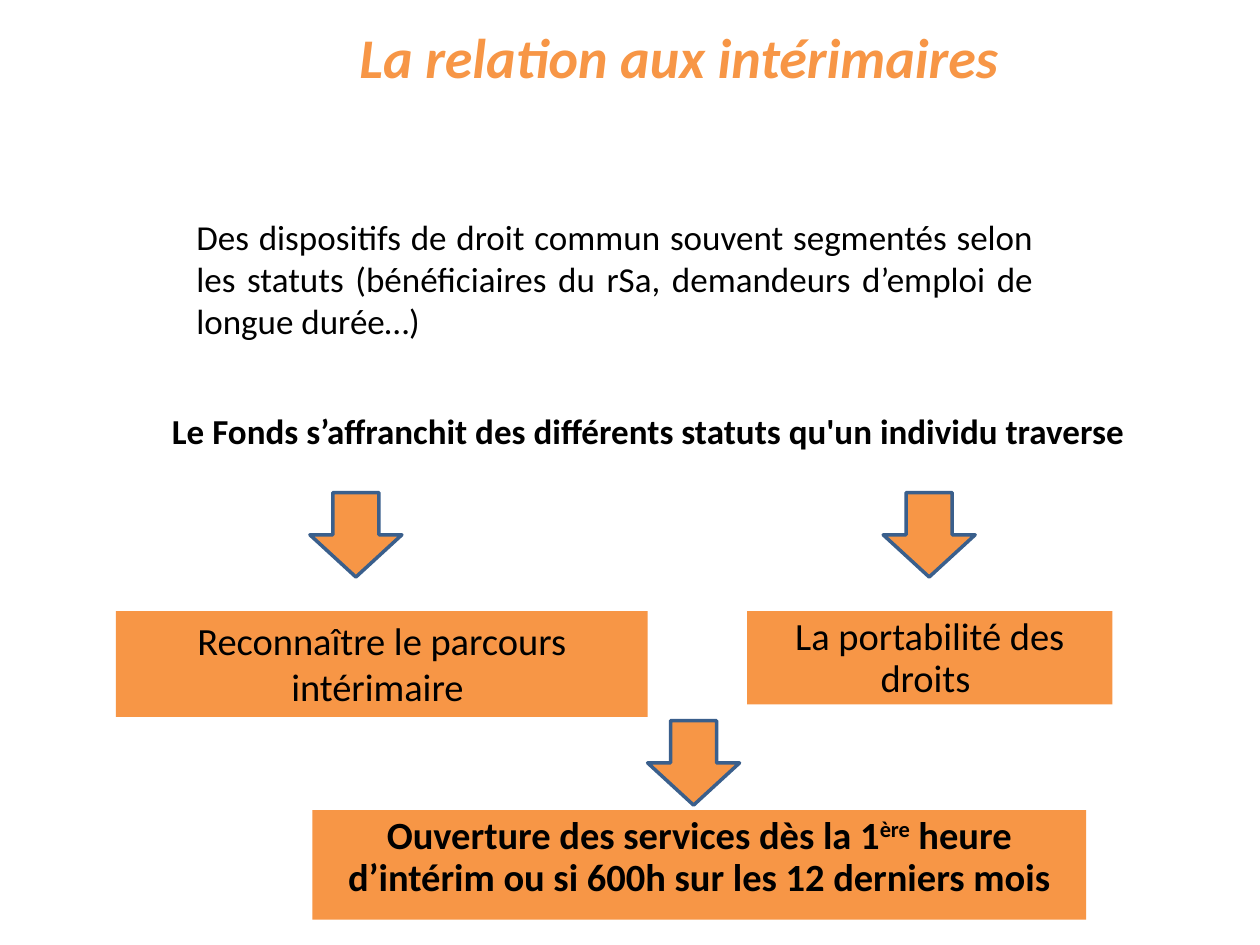
"""Build the slide on the relation with temporary workers."""
from dataclasses import dataclass

from pptx import Presentation
from pptx.dml.color import RGBColor
from pptx.enum.shapes import MSO_SHAPE
from pptx.enum.text import MSO_ANCHOR, PP_ALIGN
from pptx.util import Inches, Pt


@dataclass(frozen=True)
class Theme:
    font: str = "Calibri"
    accent: RGBColor = RGBColor(0xF7, 0x96, 0x46)
    outline: RGBColor = RGBColor(0x3A, 0x5F, 0x8C)
    ink: RGBColor = RGBColor(0, 0, 0)
    paper: RGBColor = RGBColor(0xFF, 0xFF, 0xFF)
    title_size: int = 32
    body_size: int = 20
    label_size: int = 22


class SlideBuilder:
    def __init__(self, page, theme):
        self.page = page
        self.theme = theme

    def fill_text(self, box, spans, font, align=PP_ALIGN.CENTER, anchor=MSO_ANCHOR.TOP, spacing=None):
        frame = box.text_frame
        frame.word_wrap = True
        frame.vertical_anchor = anchor
        para = frame.paragraphs[0]
        for name, value in {"alignment": align, **(spacing or {})}.items():
            setattr(para, name, value)
        style = {"name": self.theme.font, **font}
        color = style.pop("color", self.theme.ink)
        for text, baseline in spans:
            span = para.add_run()
            span.text = text
            span.font.color.rgb = color
            for name, value in style.items():
                setattr(span.font, name, value)
            if baseline:
                span._r.get_or_add_rPr().set("baseline", str(baseline * 1000))

    def shape(self, kind, place, fill, line=None, width=0):
        box = self.page.shapes.add_shape(kind, *map(Inches, place))
        box.shadow.inherit = False
        box.fill.solid()
        box.fill.fore_color.rgb = fill
        if line is None:
            box.line.fill.background()
        else:
            box.line.color.rgb = line
            box.line.width = Pt(width)
        return box

    def title(self, text, place):
        paper = self.theme.paper
        box = self.shape(MSO_SHAPE.RECTANGLE, place, paper, paper, 2.25)
        font = {"size": Pt(self.theme.title_size), "bold": True, "italic": True,
                "color": self.theme.accent}
        self.fill_text(box, [(text, 0)], font, anchor=MSO_ANCHOR.MIDDLE)

    def text(self, text, place, align, bold=False):
        box = self.page.shapes.add_textbox(*map(Inches, place))
        self.fill_text(box, [(text, 0)], {"size": Pt(self.theme.body_size), "bold": bold}, align)

    def label(self, spans, place, bold=False, spacing=None):
        box = self.shape(MSO_SHAPE.RECTANGLE, place, self.theme.accent)
        font = {"size": Pt(self.theme.label_size), "bold": bold}
        self.fill_text(box, spans, font, spacing=spacing)

    def arrow(self, left, top):
        place = (left, top, 0.73, 0.67)
        self.shape(MSO_SHAPE.DOWN_ARROW, place, self.theme.accent, self.theme.outline, 2)


def main():
    deck = Presentation()
    deck.slide_width, deck.slide_height = Inches(10), Inches(7.5)
    builder = SlideBuilder(deck.slides.add_slide(deck.slide_layouts[6]), Theme())
    tight = {"line_spacing": 0.9, "space_before": Pt(10), "space_after": Pt(6)}

    builder.title("La relation aux intérimaires", (0.78, -0.01, 9.22, 0.91))
    builder.text(
        "Des dispositifs de droit commun souvent segmentés selon les statuts "
        "(bénéficiaires du rSa, demandeurs d’emploi de longue durée…)",
        (1.46, 1.66, 6.84, 1.11), PP_ALIGN.JUSTIFY)
    builder.text("Le Fonds s’affranchit des différents statuts qu'un individu traverse",
                 (0.66, 3.2, 8.97, 0.44), PP_ALIGN.CENTER, bold=True)
    builder.label([("La portabilité des droits ", 0)], (5.93, 4.85, 2.9, 0.74), spacing=tight)
    builder.label([("Reconnaître le parcours intérimaire ", 0)], (0.92, 4.85, 4.22, 0.84))
    builder.label(
        [("Ouverture des services dès la 1", 0), ("ère", 30),
         (" heure d’intérim ou si 600h sur les 12 derniers mois", 0)],
        (2.48, 6.43, 6.14, 0.87), bold=True, spacing=tight)
    for left, top in ((2.46, 3.91), (7.01, 3.91), (5.14, 5.72)):
        builder.arrow(left, top)

    deck.save("out.pptx")


if __name__ == "__main__":
    main()
